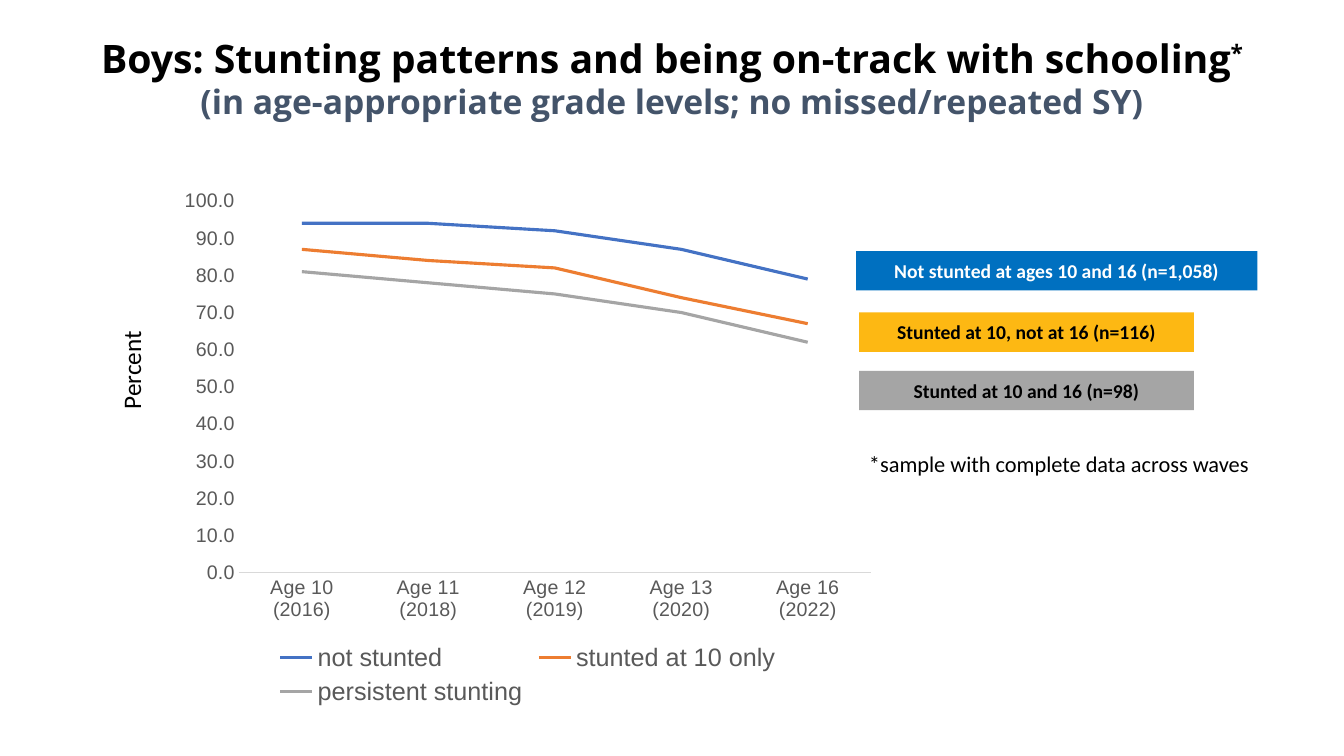
import pptx
import pptx.util
import pptx.dml.color
import pptx.chart.data
import pptx.enum.chart
import pptx.enum.shapes
import pptx.enum.text
import pptx.oxml.ns
from pptx.util import Inches

COLORS = {
    "black": "000000", "white": "FFFFFF", "slate": "44546A",
    "label blue": "0070C0", "label yellow": "FDB813", "gray": "A5A5A5",
    "line blue": "4472C4", "line orange": "ED7D31",
    "axis text": "595959", "axis line": "D9D9D9",
}

# Content: each paragraph is a list of (text, size, color, baseline)
TITLE = [
    [("Boys: Stunting patterns and being on-track with schooling", 28, "black", None),
     ("*", 28, "black", "30000")],
    [("(in age-appropriate grade levels; no missed/repeated SY)", 24, "slate", None)],
]
AGES = ["Age 10 (2016)", "Age 11 (2018)", "Age 12 (2019)",
        "Age 13 (2020)", "Age 16 (2022)"]
SERIES = [
    ("not stunted", "line blue", (94, 94, 92, 87, 79)),
    ("stunted at 10 only", "line orange", (87, 84, 82, 74, 67)),
    ("persistent stunting", "gray", (81, 78, 75, 70, 62)),
]
# text, fill, text color, left, top, width
GROUP_LABELS = [
    ("Not stunted at ages 10 and 16 (n=1,058)", "label blue", "white", 8.49, 2.49, 3.98),
    ("Stunted at 10, not at 16 (n=116)", "label yellow", "black", 8.52, 3.1, 3.32),
    ("Stunted at 10 and 16 (n=98)", "gray", "black", 8.52, 3.68, 3.32),
]
LABEL_HEIGHT = 0.39
AXIS_TITLE = "Percent"
FOOTNOTE = "*sample with complete data across waves"


def rgb(name):
    return pptx.dml.color.RGBColor.from_string(COLORS[name])


def style_font(font, name, size, color, bold=False):
    font.name = name
    font.size = pptx.util.Pt(size)
    font.bold = bold
    font.color.rgb = rgb(color)


def fill_text(shape, paragraphs, font_name, align, anchor, inset, bold=False):
    frame = shape.text_frame
    frame.word_wrap = True
    frame.vertical_anchor = anchor
    frame.margin_left = frame.margin_right = Inches(inset)
    frame.margin_top = frame.margin_bottom = Inches(inset / 2)
    for index, spans in enumerate(paragraphs):
        para = frame.add_paragraph() if index else frame.paragraphs[0]
        para.alignment = align
        for text, size, color, baseline in spans:
            span = para.add_run()
            span.text = text
            style_font(span.font, font_name, size, color, bold)
            if baseline:
                span.font._element.set("baseline", baseline)


def add_text_box(page, area, *text_options):
    box = page.shapes.add_textbox(*map(Inches, area))
    fill_text(box, *text_options)
    return box


def add_group_label(page, text, fill, color, left, top, width):
    area = map(Inches, (left, top, width, LABEL_HEIGHT))
    label = page.shapes.add_shape(pptx.enum.shapes.MSO_SHAPE.RECTANGLE, *area)
    label.shadow.inherit = False
    label.fill.solid()
    label.fill.fore_color.rgb = rgb(fill)
    label.line.fill.background()
    fill_text(label, [[(text, 14, color, None)]], "Calibri", CENTER, TOP, 0.15, True)


def add_line_chart(page):
    data = pptx.chart.data.CategoryChartData(number_format="0.0")
    data.categories = AGES
    for name, color, values in SERIES:
        data.add_series(name, values)
    area = map(Inches, (1.69, 1.78, 7.09, 5.27))
    chart = page.shapes.add_chart(
        pptx.enum.chart.XL_CHART_TYPE.LINE, *area, data).chart
    style_font(chart.font, "Arial", 10, "black")
    chart.has_title = False

    # Lines
    chart.plots[0].vary_by_categories = False
    for series, (name, color, values) in zip(chart.plots[0].series, SERIES):
        series.smooth = False
        series.marker.style = pptx.enum.chart.XL_MARKER_STYLE.NONE
        series.format.line.color.rgb = rgb(color)
        series.format.line.width = pptx.util.Pt(2.25)

    # Axes
    for axis in (chart.category_axis, chart.value_axis):
        axis.has_major_gridlines = False
        axis.major_tick_mark = pptx.enum.chart.XL_TICK_MARK.NONE
        axis.minor_tick_mark = pptx.enum.chart.XL_TICK_MARK.NONE
        style_font(axis.tick_labels.font, "Arial", 14, "axis text")
    chart.category_axis.format.line.color.rgb = rgb("axis line")
    chart.category_axis.format.line.width = pptx.util.Pt(0.75)
    value_axis = chart.value_axis
    value_axis.format.line.fill.background()
    value_axis.minimum_scale, value_axis.maximum_scale = 0, 100
    value_axis.major_unit = 10
    value_axis.tick_labels.number_format = "0.0"
    value_axis.tick_labels.number_format_is_linked = False

    # Legend
    chart.has_legend = True
    chart.legend.position = pptx.enum.chart.XL_LEGEND_POSITION.BOTTOM
    chart.legend.include_in_layout = False
    style_font(chart.legend.font, "Arial", 18, "axis text")


LEFT, CENTER = pptx.enum.text.PP_ALIGN.LEFT, pptx.enum.text.PP_ALIGN.CENTER
TOP, MIDDLE = pptx.enum.text.MSO_ANCHOR.TOP, pptx.enum.text.MSO_ANCHOR.MIDDLE

deck = pptx.Presentation()
deck.slide_width, deck.slide_height = Inches(13.33), Inches(7.5)
page = deck.slides.add_slide(deck.slide_layouts[6])

# Title
add_text_box(page, (0, 0.24, 13.33, 1.06), TITLE, "Open Sans", CENTER, MIDDLE, 0.15, True)

# Group labels beside the chart
for label in GROUP_LABELS:
    add_group_label(page, *label)

# Chart with its axis title and footnote
add_line_chart(page)
axis_title = add_text_box(page, (0.66, 3.32, 1.28, 0.4),
                          [[(AXIS_TITLE, 18, "black", None)]], "Calibri", LEFT, TOP, 0.1)
axis_title.rotation = 270
add_text_box(page, (8.52, 4.42, 4.15, 0.64),
             [[(FOOTNOTE, 16, "black", None)]], "Calibri", LEFT, TOP, 0.1)

deck.save("out.pptx")
